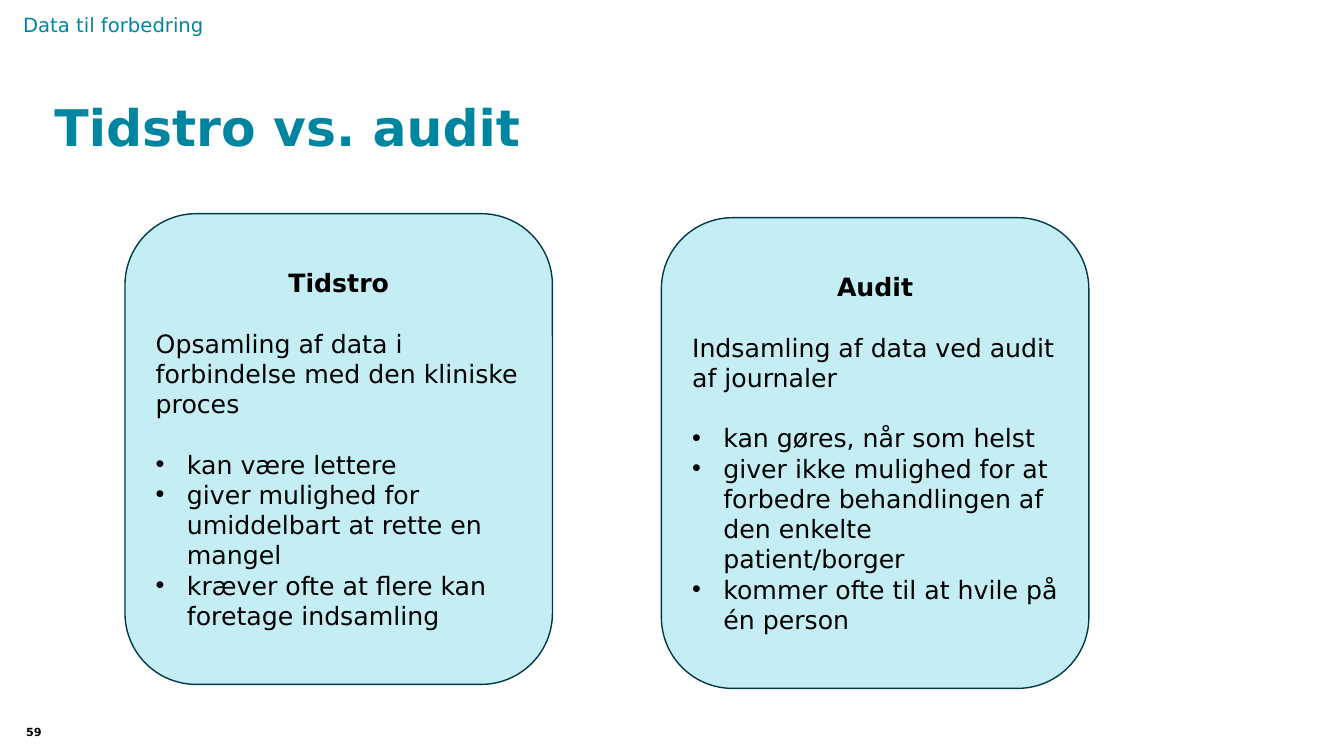
from dataclasses import dataclass

from lxml import etree
from pptx import Presentation
from pptx import util as u
from pptx.dml.color import RGBColor
from pptx.enum import shapes, text
from pptx.oxml.ns import qn

TEAL = RGBColor(0x00, 0x85, 0xA1)
HEADER_TEAL = RGBColor(0x00, 0x85, 0xA0)
PALE_TEAL = RGBColor(0xC5, 0xED, 0xF4)
DARK_TEAL = RGBColor(0x00, 0x3A, 0x47)
BLACK = RGBColor(0x00, 0x00, 0x00)

WIDTH, HEIGHT = u.Inches(13.33), u.Inches(7.5)
FONT = "DejaVu Sans"
BLANK_LINE = u.Pt(21.5)
BULLET_INDENT = u.Inches(0.31)


@dataclass(frozen=True)
class Area:
    left: float
    top: float
    width: float
    height: float

    def lengths(self) -> tuple[int, int, int, int]:
        return (int(self.left * WIDTH / 100), int(self.top * HEIGHT / 100),
                int(self.width * WIDTH / 100), int(self.height * HEIGHT / 100))


@dataclass(frozen=True)
class Label:
    wording: str
    area: Area
    size: int
    colour: RGBColor
    bold: bool = False
    frame_format: tuple = ()
    line_spacing: float = 1.0


@dataclass(frozen=True)
class Method:
    name: str
    summary: str
    traits: tuple[str, ...]
    left: float
    top: float


TITLE_FRAME = (("vertical_anchor", text.MSO_ANCHOR.BOTTOM), ("margin_left", 0),
               ("margin_top", 0), ("margin_right", 0), ("margin_bottom", 0))

LABELS = (
    Label("Tidstro vs. audit", Area(4.05, 4.13, 67.52, 16.67), 36, TEAL, True,
          TITLE_FRAME, 0.9),
    Label("Data til forbedring", Area(0.98, 1.07, 27.68, 4.53), 14, HEADER_TEAL),
    Label("59", Area(1.2, 95.33, 2.93, 4.67), 8, BLACK, True),
)

METHODS = (
    Method("Tidstro", "Opsamling af data i forbindelse med den kliniske proces",
           ("kan være lettere",
            "giver mulighed for umiddelbart at rette en mangel",
            "kræver ofte at flere kan foretage indsamling"), 9.3, 28.27),
    Method("Audit", "Indsamling af data ved audit af journaler",
           ("kan gøres, når som helst",
            "giver ikke mulighed for at forbedre behandlingen af den enkelte patient/borger",
            "kommer ofte til at hvile på én person"), 49.21, 28.8),
)


def apply(target, formats: dict) -> None:
    for attribute, value in formats.items():
        setattr(target, attribute, value)


def write(paragraph, wording: str, size: int, colour: RGBColor, bold: bool = False) -> None:
    run = paragraph.add_run()
    run.text = wording
    apply(run.font, {"name": FONT, "size": u.Pt(size), "bold": bold})
    run.font.color.rgb = colour


def add_bullet(paragraph) -> None:
    properties = paragraph._p.get_or_add_pPr()
    properties.set("marL", str(BULLET_INDENT))
    properties.set("indent", str(-BULLET_INDENT))
    etree.SubElement(properties, qn("a:buFont")).set("typeface", "Arial")
    etree.SubElement(properties, qn("a:buChar")).set("char", "•")


def draw_label(slide, label: Label) -> None:
    frame = slide.shapes.add_textbox(*label.area.lengths()).text_frame
    apply(frame, {"word_wrap": True, **dict(label.frame_format)})
    line = frame.paragraphs[0]
    line.line_spacing = label.line_spacing
    write(line, label.wording, label.size, label.colour, label.bold)


def draw_method(slide, method: Method) -> None:
    area = Area(method.left, method.top, 31.81, 62.27)
    card = slide.shapes.add_shape(shapes.MSO_SHAPE.ROUNDED_RECTANGLE, *area.lengths())
    card.shadow.inherit = False
    card.fill.solid()
    card.fill.fore_color.rgb = PALE_TEAL
    card.line.color.rgb = DARK_TEAL
    card.line.width = u.Pt(1)
    frame = card.text_frame
    apply(frame, {"word_wrap": True, "vertical_anchor": text.MSO_ANCHOR.MIDDLE})

    heading = frame.paragraphs[0]
    apply(heading, {"alignment": text.PP_ALIGN.CENTER, "space_after": BLANK_LINE})
    write(heading, method.name, 18, BLACK, True)

    summary = frame.add_paragraph()
    apply(summary, {"alignment": text.PP_ALIGN.LEFT, "space_after": BLANK_LINE})
    write(summary, method.summary, 18, BLACK)

    for wording in method.traits:
        trait = frame.add_paragraph()
        add_bullet(trait)
        trait.alignment = text.PP_ALIGN.LEFT
        write(trait, wording, 18, BLACK)


def main() -> None:
    deck = Presentation()
    apply(deck, {"slide_width": WIDTH, "slide_height": HEIGHT})
    slide = deck.slides.add_slide(deck.slide_layouts[6])
    for label in LABELS:
        draw_label(slide, label)
    for method in METHODS:
        draw_method(slide, method)
    deck.save("out.pptx")


if __name__ == "__main__":
    main()
